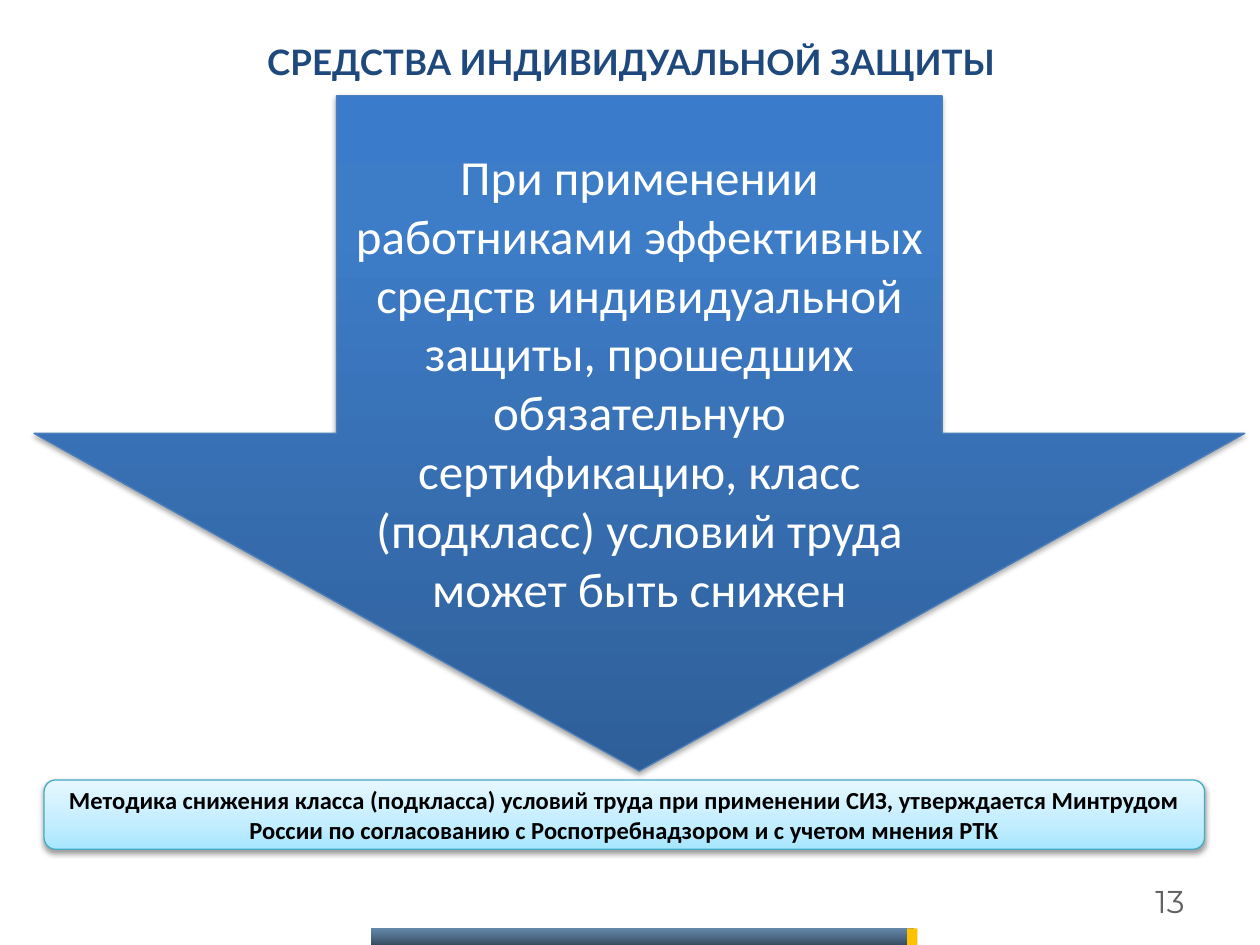
from lxml.etree import SubElement
from pptx import Presentation
from pptx.dml.color import RGBColor
from pptx.enum.shapes import MSO_SHAPE
from pptx.enum.text import MSO_ANCHOR, PP_ALIGN
from pptx.oxml.ns import qn
from pptx.util import Pt

NAVY = RGBColor(0x1F, 0x49, 0x7D)
GREY = RGBColor(0x62, 0x62, 0x62)
WHITE = RGBColor(0xFF, 0xFF, 0xFF)
BLACK = RGBColor(0, 0, 0)
GOLD = RGBColor(0xFF, 0xC0, 0)
BLUE = RGBColor(0x4B, 0x7E, 0xBC)
TEAL = RGBColor(0x46, 0xAA, 0xC5)
BAR = [(0, RGBColor(0, 0x3C, 0x73), 60), (100, RGBColor(0, 0x1C, 0x35), 80)]
ARROW = [(0, RGBColor(0x2F, 0x5F, 0x99), 100),
         (80, RGBColor(0x3D, 0x7C, 0xC7), 100),
         (100, RGBColor(0x3A, 0x7C, 0xCB), 100)]
NOTE = [(0, RGBColor(0xA7, 0xE6, 0xFF), 100),
        (35, RGBColor(0xC1, 0xED, 0xFF), 100),
        (100, RGBColor(0xE7, 0xF8, 0xFF), 100)]


def add_color(node, color, alpha):
    """Add an RGB colour with its opacity in percent."""
    rgb = SubElement(node, qn("a:srgbClr"), val=str(color))
    if alpha < 100:
        SubElement(rgb, qn("a:alpha"), val=str(alpha * 1000))


def set_grad(shape, stops, angle):
    """Fill a shape with a linear gradient."""
    shape.fill.gradient()
    shape.fill.gradient_angle = angle
    items = shape._element.spPr.find(qn("a:gradFill")).find(qn("a:gsLst"))
    for old in list(items):
        items.remove(old)
    for pos, color, alpha in stops:
        stop = SubElement(items, qn("a:gs"), pos=str(pos * 1000))
        add_color(stop, color, alpha)


def set_shade(shape, alpha, dist):
    """Give a shape a soft shadow that falls downwards."""
    effects = shape._element.spPr.find(qn("a:effectLst"))
    shade = SubElement(effects, qn("a:outerShdw"), blurRad=str(Pt(3.1)),
                       dist=str(Pt(dist)), dir="5400000", rotWithShape="0")
    add_color(shade, BLACK, alpha)


def add_shape(slide, kind, box, line=None):
    """Add a preset shape with an optional thin line."""
    shape = slide.shapes.add_shape(kind, *map(Pt, box))
    shape.shadow.inherit = False
    if line is None:
        shape.line.fill.background()
    else:
        shape.line.color.rgb = line
        shape.line.width = Pt(0.75)
    return shape


def set_text(shape, text, font, size, color, bold=False,
             align=PP_ALIGN.CENTER, anchor=MSO_ANCHOR.MIDDLE):
    """Write one formatted run into a shape."""
    frame = shape.text_frame
    frame.word_wrap = True
    frame.vertical_anchor = anchor
    para = frame.paragraphs[0]
    para.alignment = align
    run = para.add_run()
    run.text = text
    run.font.name = font
    run.font.size = Pt(size)
    run.font.bold = bold
    run.font.color.rgb = color


def add_title(slide):
    """Place and format the title."""
    title = slide.shapes.title
    title.left, title.top, title.width, title.height = map(
        Pt, (36.7, 15.1, 648, 39.6))
    set_text(title, "СРЕДСТВА ИНДИВИДУАЛЬНОЙ ЗАЩИТЫ", "Lato", 20, NAVY, True)


def add_foot(slide):
    """Add the page number and the bar at the bottom edge."""
    page = slide.shapes.add_textbox(*map(Pt, (516.2, 500.4, 167.8, 28.8)))
    set_text(page, "13", "Montserrat", 18, GREY, align=PP_ALIGN.RIGHT)
    bar = add_shape(slide, MSO_SHAPE.RECTANGLE, (212.4, 530.6, 309.6, 9.4))
    set_grad(bar, BAR, 270)
    tip = add_shape(slide, MSO_SHAPE.RECTANGLE, (518.4, 530.6, 5.8, 9.4))
    tip.fill.solid()
    tip.fill.fore_color.rgb = GOLD


def add_arrow(slide):
    """Add the large arrow with the main statement."""
    arrow = add_shape(slide, MSO_SHAPE.DOWN_ARROW,
                      (19.4, 54.7, 691.9, 385.9), BLUE)
    arrow.adjustments[0] = 0.5
    arrow.adjustments[1] = 0.5
    set_grad(arrow, ARROW, 90)
    set_shade(arrow, 35, 1.8)
    set_text(arrow, "При применении работниками эффективных средств "
             "индивидуальной защиты, прошедших обязательную сертификацию, "
             "класс (подкласс) условий труда может быть снижен",
             "Calibri", 28, WHITE, anchor=MSO_ANCHOR.TOP)
    arrow.text_frame.margin_top = Pt(29)
    arrow.text_frame.margin_bottom = Pt(0)


def add_note(slide):
    """Add the rounded note under the arrow."""
    note = add_shape(slide, MSO_SHAPE.ROUNDED_RECTANGLE,
                     (25.2, 445.7, 663.1, 39.6), TEAL)
    set_grad(note, NOTE, 90)
    set_shade(note, 38, 1.6)
    set_text(note, "Методика снижения класса (подкласса) условий труда при "
             "применении СИЗ, утверждается Минтрудом России по согласованию "
             "с Роспотребнадзором и с учетом мнения РТК",
             "Calibri", 14, BLACK, True)


def main():
    """Build the slide and save it."""
    deck = Presentation()
    deck.slide_width, deck.slide_height = Pt(720), Pt(540)
    slide = deck.slides.add_slide(deck.slide_layouts[5])
    add_title(slide)
    add_foot(slide)
    add_arrow(slide)
    add_note(slide)
    deck.save("out.pptx")


if __name__ == "__main__":
    main()
